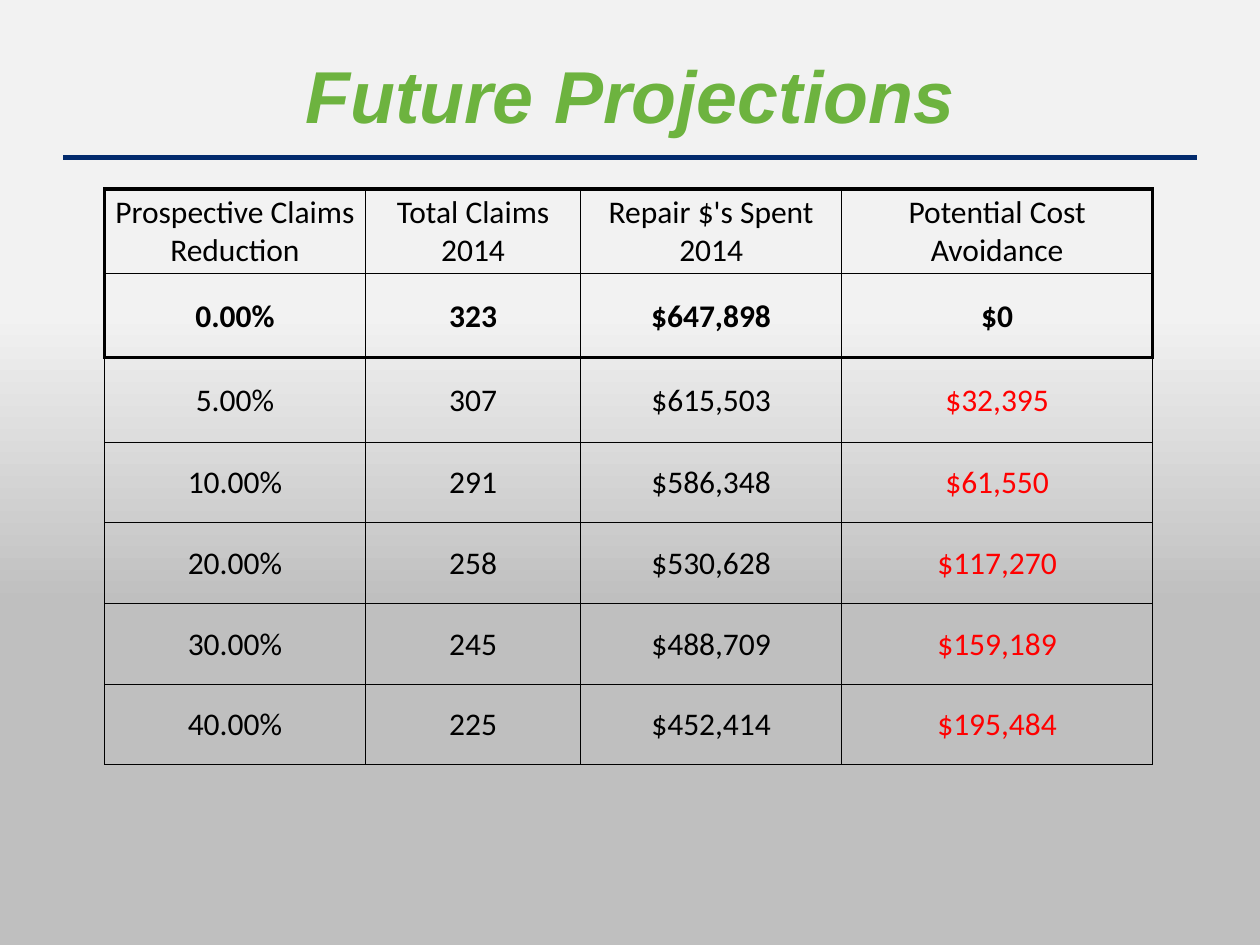
"""Build the Future Projections slide with its claims table."""
from dataclasses import dataclass

from lxml.etree import SubElement as Sub
from pptx import Presentation as Deck
from pptx.dml.color import RGBColor
from pptx.enum.shapes import MSO_CONNECTOR as Link
from pptx.enum.text import MSO_ANCHOR as Anchor, PP_ALIGN as Align
from pptx.oxml.ns import qn
from pptx.util import Inches, Pt

BLACK = RGBColor(0x00, 0x00, 0x00)
RED = RGBColor(0xFF, 0x00, 0x00)
GREEN = RGBColor(0x6D, 0xB3, 0x3F)
NAVY = RGBColor(0x03, 0x2B, 0x6D)
PALE = RGBColor(0xF2, 0xF2, 0xF2)
GREY = RGBColor(0xBF, 0xBF, 0xBF)

THIN, THICK = 0.5, 2
WIDTHS = (2.07, 1.71, 2.07, 2.47)
HEAD = ("Prospective Claims Reduction", "Total Claims 2014",
        "Repair $'s Spent 2014", "Potential Cost Avoidance")
TITLE = {"size": Pt(42), "name": "Arial", "bold": True, "italic": True}
PLAIN = {"size": Pt(18), "name": "Calibri", "bold": False}
INSET = {"margin_left": Inches(0.01), "margin_top": Inches(0.01),
         "margin_right": Inches(0.01), "margin_bottom": 0,
         "vertical_anchor": Anchor.MIDDLE}


@dataclass
class Row:
    """One line of the table."""
    texts: tuple[str, ...]
    height: float = 0.64
    bold: bool = False
    last: RGBColor = RED


ROWS = (
    Row(HEAD, 0.67, last=BLACK),
    Row(("0.00%", "323", "$647,898", "$0"), 0.67, True, BLACK),
    Row(("5.00%", "307", "$615,503", "$32,395"), 0.67),
    Row(("10.00%", "291", "$586,348", "$61,550")),
    Row(("20.00%", "258", "$530,628", "$117,270")),
    Row(("30.00%", "245", "$488,709", "$159,189")),
    Row(("40.00%", "225", "$452,414", "$195,484")),
)


def apply(item, values: dict) -> None:
    """Set each named value on the item."""
    for key, value in values.items():
        setattr(item, key, value)


def write(frame, text: str, font: dict, color: RGBColor) -> None:
    """Put centred text in a frame."""
    frame.text = text
    para = frame.paragraphs[0]
    para.alignment = Align.CENTER
    face = para.runs[0].font
    apply(face, font)
    face.color.rgb = color


def edge(cell, sides: dict[str, float]) -> None:
    """Draw the cell borders at the given widths."""
    props = cell._tc.get_or_add_tcPr()
    for side, width in sides.items():
        line = Sub(props, qn(f"a:ln{side}"), w=str(Pt(width)))
        Sub(Sub(line, qn("a:solidFill")), qn("a:srgbClr"), val=str(BLACK))


def borders(row: int, col: int) -> dict[str, float]:
    """Thicken the frame round the first two rows."""
    final = len(WIDTHS) - 1
    heavy = {"L": row < 2 and col == 0, "R": row < 2 and col == final,
             "T": row in (0, 2), "B": row == 1}
    return {side: THICK if on else THIN for side, on in heavy.items()}


def grid(slide) -> None:
    """Add the claims table."""
    table = slide.shapes.add_table(
        len(ROWS), len(WIDTHS), Inches(0.83), Inches(1.5),
        Inches(sum(WIDTHS)), Inches(sum(row.height for row in ROWS))).table
    apply(table, {"first_row": False, "horz_banding": False})
    for col, width in zip(table.columns, WIDTHS):
        col.width = Inches(width)
    for r, row in enumerate(ROWS):
        table.rows[r].height = Inches(row.height)
        for c, text in enumerate(row.texts):
            cell = table.cell(r, c)
            apply(cell, INSET)
            edge(cell, borders(r, c))
            cell.fill.background()
            color = row.last if c == len(WIDTHS) - 1 else BLACK
            write(cell.text_frame, text, PLAIN | {"bold": row.bold}, color)


def shade(slide) -> None:
    """Fill the background from pale to grey, downwards."""
    fill = slide.background.fill
    fill.gradient()
    fill.gradient_angle = 270
    for stop, (spot, color) in zip(fill.gradient_stops, ((0.33, PALE), (0.64, GREY))):
        stop.position = spot
        stop.color.rgb = color


def rule(slide) -> None:
    """Add the line under the title."""
    line = slide.shapes.add_connector(
        Link.STRAIGHT, Inches(0.5), Inches(1.25), Inches(9.5), Inches(1.25))
    line.line.color.rgb = NAVY
    line.line.width = Pt(3)
    Sub(line._element.spPr, qn("a:effectLst"))


def main() -> None:
    """Make and save the deck."""
    deck = Deck()
    apply(deck, {"slide_width": Inches(10), "slide_height": Inches(7.5)})
    slide = deck.slides.add_slide(deck.slide_layouts[5])
    shade(slide)
    rule(slide)
    title = slide.shapes.title
    apply(title, {"left": Inches(0.5), "top": Inches(0.33),
                  "width": Inches(9), "height": Inches(0.83)})
    title.text_frame.vertical_anchor = Anchor.MIDDLE
    write(title.text_frame, "Future Projections", TITLE, GREEN)
    grid(slide)
    deck.save("out.pptx")


if __name__ == "__main__":
    main()
